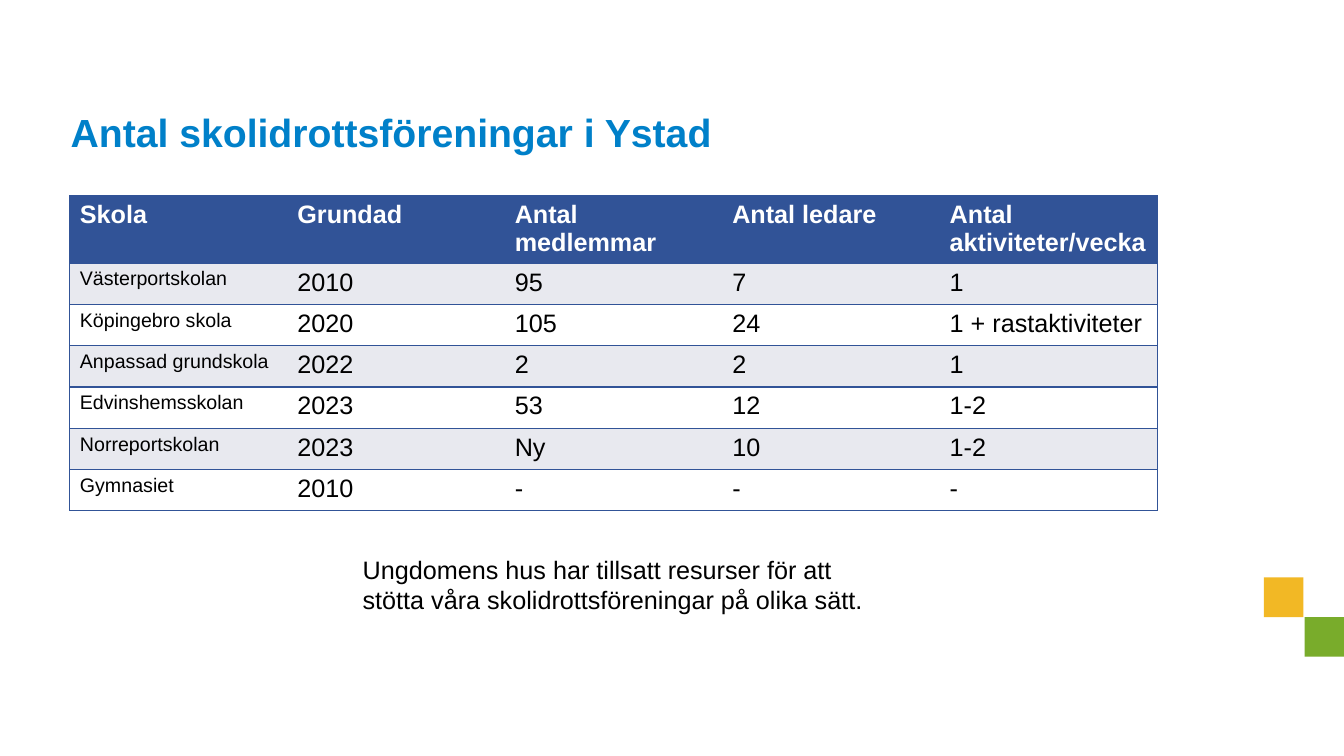
from lxml.etree import SubElement
from pptx import Presentation
from pptx.dml.color import RGBColor
from pptx.enum.shapes import MSO_SHAPE
from pptx.enum.text import MSO_ANCHOR, PP_ALIGN
from pptx.oxml.ns import qn
from pptx.util import Cm, Pt

TITLE = "Antal skolidrottsföreningar i Ystad"
HEADER = ("Skola", "Grundad", "Antal medlemmar", "Antal ledare", "Antal aktiviteter/vecka")
SCHOOLS = [
    ("Västerportskolan", "2010", "95", "7", "1"),
    ("Köpingebro skola", "2020", "105", "24", "1 + rastaktiviteter"),
    ("Anpassad grundskola", "2022", "2", "2", "1"),
    ("Edvinshemsskolan", "2023", "53", "12", "1-2"),
    ("Norreportskolan", "2023", "Ny", "10", "1-2"),
    ("Gymnasiet", "2010", "-", "-", "-"),
]
NOTE = ("Ungdomens hus har tillsatt resurser för att stötta våra "
        "skolidrottsföreningar på olika sätt.")
COLORS = {
    "title": "0080C9", "header": "315397", "band": "E8E9EF", "white": "FFFFFF",
    "text": "000000", "yellow": "F2B825", "green": "79AC2B",
}
SQUARES = [("yellow", 31.85, 14.55), ("green", 32.88, 15.55)]
SQUARE_SIDE = Cm(1)
COLUMN_WIDTH, HEADER_HEIGHT, ROW_HEIGHT = Cm(5.48), Cm(1.7), Cm(1.04)


def color(name):
    return RGBColor.from_string(COLORS[name])


def style_text(frame, size, color_name, bold=False):
    for para in frame.paragraphs:
        for span in para.runs:
            span.font.name = "Arial"
            span.font.size = Pt(size)
            span.font.bold = bold
            span.font.color.rgb = color(color_name)


def set_borders(cell, visible):
    """Draw the sides named in visible (letters of LRTB) and clear the others."""
    properties = cell._tc.get_or_add_tcPr()
    for side in "LRTB":
        line = SubElement(properties, qn(f"a:ln{side}"), w=str(Pt(1)))
        if side in visible:
            fill = SubElement(line, qn("a:solidFill"))
            SubElement(fill, qn("a:srgbClr"), val=COLORS["header"])
        else:
            SubElement(line, qn("a:noFill"))


def add_squares(page):
    for name, left, top in SQUARES:
        square = page.shapes.add_shape(
            MSO_SHAPE.RECTANGLE, Cm(left), Cm(top), SQUARE_SIDE, SQUARE_SIDE)
        square.shadow.inherit = False
        square.fill.solid()
        square.fill.fore_color.rgb = color(name)
        square.line.fill.background()


def add_school_table(page):
    rows = [HEADER, *SCHOOLS]
    last = len(HEADER) - 1
    table = page.shapes.add_table(
        len(rows), len(HEADER), Cm(1.76), Cm(4.93), COLUMN_WIDTH * len(HEADER),
        HEADER_HEIGHT + ROW_HEIGHT * len(SCHOOLS)).table
    table.horz_banding = False
    for column in table.columns:
        column.width = COLUMN_WIDTH
    for r, values in enumerate(rows):
        is_header = r == 0
        table.rows[r].height = HEADER_HEIGHT if is_header else ROW_HEIGHT
        fill_name = "header" if is_header else ("white", "band")[r % 2]
        for c, value in enumerate(values):
            cell = table.cell(r, c)
            cell.text_frame.text = value
            size = 14 if c == 0 and not is_header else 18
            style_text(cell.text_frame, size, "white" if is_header else "text", is_header)
            set_borders(cell, "TB" + "L" * (c == 0) + "R" * (c == last))
            cell.fill.solid()
            cell.fill.fore_color.rgb = color(fill_name)


def add_title(page):
    title = page.shapes.title
    title.left, title.top, title.width, title.height = Cm(1.78), Cm(1.73), Cm(27.4), Cm(2.2)
    frame = title.text_frame
    frame.text = TITLE
    frame.word_wrap = True
    frame.vertical_anchor = MSO_ANCHOR.BOTTOM
    frame.margin_left = frame.margin_right = frame.margin_top = frame.margin_bottom = 0
    frame.paragraphs[0].alignment = PP_ALIGN.LEFT
    frame.paragraphs[0].line_spacing = 0.9
    style_text(frame, 28, "title", True)


def add_note(page):
    box = page.shapes.add_textbox(Cm(8.89), Cm(13.84), Cm(13.34), Cm(1.8))
    box.text_frame.word_wrap = True
    box.text_frame.text = NOTE
    style_text(box.text_frame, 18, "text")


def main():
    deck = Presentation()
    deck.slide_width, deck.slide_height = Cm(33.87), Cm(19.05)
    page = deck.slides.add_slide(deck.slide_layouts[5])
    add_squares(page)
    add_school_table(page)
    add_title(page)
    add_note(page)
    deck.save("out.pptx")


if __name__ == "__main__":
    main()
